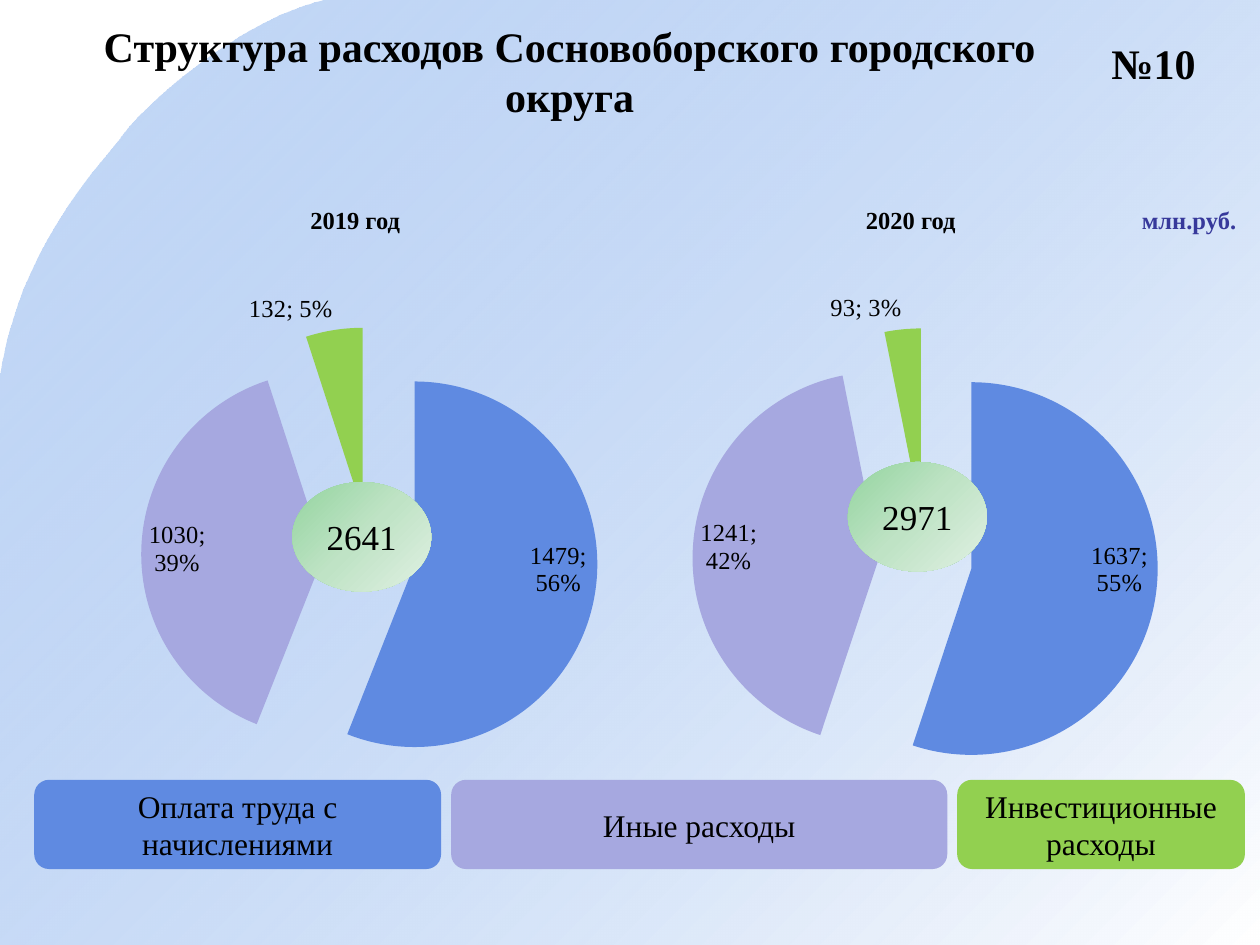
import pptx
import pptx.chart.data
import pptx.dml.color
import pptx.enum.chart
import pptx.enum.shapes
import pptx.enum.text
import pptx.oxml
import pptx.oxml.ns
import pptx.util

Pt = pptx.util.Pt
qn = pptx.oxml.ns.qn
Shape = pptx.enum.shapes.MSO_SHAPE
LabelPosition = pptx.enum.chart.XL_LABEL_POSITION

THEME = {
    "font": "Times New Roman",
    "chart_font": "Arial",
    "ink": "000000",
    "unit": "37399B",
    "pay": "5F8AE1",
    "other": "A6A8E0",
    "invest": "92D050",
    "wave": [(0, "699DE9", 39), (100, "FFFFFF", 100)],
    "total": [(0, "93D49F", 100), (50, "BFE3C5", 100), (100, "E0F0E3", 100)],
    "title_size": 24,
    "total_size": 20,
    "legend_size": 18,
    "label_size": 14,
    "chart_size": 10,
}

PAGE_WIDTH, PAGE_HEIGHT = 720, 540
WAVE_CURVES = [
    [(185.8, 0), (136.8, 11.5), (83.5, 59.8), (70.6, 77)],
    [(70.6, 77), (57.6, 95), (11.5, 139.7), (0, 216.7)],
]
CURVE_STEPS = 24

HEADINGS = [
    ("Структура расходов Сосновоборского городского округа", (36, 18, 579, 44.6), "title_size", "ink"),
    ("№10", (598.3, 0, 121.7, 71.3), "title_size", "ink"),
    ("2019 год", (150.5, 111.6, 105, 28), "label_size", "ink"),
    ("2020 год", (468, 111.6, 105, 28), "label_size", "ink"),
    ("млн.руб.", (627, 111.6, 105, 28), "label_size", "unit"),
]
SLICES = ["pay", "other", "invest"]
PIES = [
    {
        "box": (0, 157, 422.6, 300.2),
        "plot": (0.19, 0.1, 0.62, 0.87),
        "values": (1479, 1030, 132),
        "labels": [("1479;", "56%"), ("1030;", "39%")],
    },
    {
        "box": (337.7, 157, 382.3, 306),
        "plot": (0.15, 0.1, 0.7, 0.87),
        "values": (1637, 1241, 93),
        "labels": [("1637;", "55%"), ("1241;", "42%")],
    },
]
TOTALS = [("2641", 167, 275.5), ("2971", 484.5, 264)]
TOTAL_WIDTH, TOTAL_HEIGHT = 79.4, 62.6
LEGEND = [
    ("Оплата труда с начислениями", 232.5, "pay"),
    ("Иные расходы", 283.5, "other"),
    ("Инвестиционные расходы", 164.4, "invest"),
]
LEGEND_LEFT, LEGEND_TOP, LEGEND_HEIGHT, LEGEND_GAP = 19.6, 445.6, 51, 5.7


def points(values):
    return [Pt(value) for value in values]


def colour(name):
    return pptx.dml.color.RGBColor.from_string(THEME[name])


def style_font(font, size, face="font", ink="ink", bold=False):
    font.name = THEME[face]
    font.size = Pt(THEME[size])
    font.bold = bold
    font.color.rgb = colour(ink)


def write_text(box, text, size, ink="ink", bold=False):
    frame = box.text_frame
    frame.word_wrap = True
    frame.vertical_anchor = pptx.enum.text.MSO_ANCHOR.MIDDLE
    para = frame.paragraphs[0]
    para.alignment = pptx.enum.text.PP_ALIGN.CENTER
    span = para.add_run()
    span.text = text
    style_font(span.font, size, ink=ink, bold=bold)


def clean_shape(shape):
    shape.shadow.inherit = False
    shape.line.fill.background()


def fill_gradient(shape, stops):
    shape.fill.gradient()
    shape.fill.gradient_angle = 315
    stop_list = shape.element.spPr.find(".//" + qn("a:gsLst"))
    for stop in list(stop_list):
        stop_list.remove(stop)
    for position, rgb, opacity in stops:
        stop_list.append(pptx.oxml.parse_xml(
            f'<a:gs {pptx.oxml.ns.nsdecls("a")} pos="{position * 1000}"><a:srgbClr val="{rgb}">'
            f'<a:alpha val="{opacity * 1000}"/></a:srgbClr></a:gs>'))


def curve_point(controls, t):
    weights = ((1 - t) ** 3, 3 * t * (1 - t) ** 2, 3 * t * t * (1 - t), t ** 3)
    return tuple(sum(w * point[axis] for w, point in zip(weights, controls)) for axis in (0, 1))


def add_wave(page):
    outline = [curve_point(curve, step / CURVE_STEPS)
               for curve in WAVE_CURVES for step in range(1, CURVE_STEPS + 1)]
    outline += [(0, PAGE_HEIGHT), (PAGE_WIDTH, PAGE_HEIGHT), (PAGE_WIDTH, 0)]
    builder = page.shapes.build_freeform(*points(WAVE_CURVES[0][0]))
    builder.add_line_segments([points(corner) for corner in outline], close=True)
    wave = builder.convert_to_shape()
    clean_shape(wave)
    fill_gradient(wave, THEME["wave"])


def place_plot(chart, plot):
    area = chart.element.find(".//" + qn("c:plotArea"))
    for layout in area.findall(qn("c:layout")):
        area.remove(layout)
    sizes = "".join(f'<c:{key} val="{value}"/>' for key, value in zip("xywh", plot))
    area.insert(0, pptx.oxml.parse_xml(
        f'<c:layout {pptx.oxml.ns.nsdecls("c")}><c:manualLayout><c:layoutTarget val="inner"/>'
        f'<c:xMode val="edge"/><c:yMode val="edge"/>{sizes}</c:manualLayout></c:layout>'))


def label_slices(series, series_xml, texts):
    labels = series.data_labels
    labels.show_value = True
    labels.show_percentage = True
    labels.position = LabelPosition.OUTSIDE_END
    style_font(labels.font, "label_size")
    separator = pptx.oxml.parse_xml(f'<c:separator {pptx.oxml.ns.nsdecls("c")}>; </c:separator>')
    series_xml.find(qn("c:dLbls")).find(qn("c:showBubbleSize")).addnext(separator)
    for index, lines in enumerate(texts):
        label = series.points[index].data_label
        frame = label.text_frame
        for number, line in enumerate(lines):
            para = frame.add_paragraph() if number else frame.paragraphs[0]
            span = para.add_run()
            span.text = line
            style_font(span.font, "label_size")
        label.position = LabelPosition.INSIDE_END


def add_pie(page, pie):
    data = pptx.chart.data.CategoryChartData()
    data.categories = ["1", "2", "3"]
    data.add_series("Series 1", pie["values"])
    chart = page.shapes.add_chart(
        pptx.enum.chart.XL_CHART_TYPE.PIE, *points(pie["box"]), data).chart
    chart.has_legend = False
    chart.has_title = False
    style_font(chart.font, "chart_size", face="chart_font")
    place_plot(chart, pie["plot"])
    chart.plots[0].vary_by_categories = True
    series = chart.plots[0].series[0]
    series_xml = chart.element.find(".//" + qn("c:ser"))
    series_xml.find(qn("c:tx")).addnext(
        pptx.oxml.parse_xml(f'<c:explosion {pptx.oxml.ns.nsdecls("c")} val="25"/>'))
    for index, name in enumerate(SLICES):
        fill = series.points[index].format.fill
        fill.solid()
        fill.fore_color.rgb = colour(name)
    label_slices(series, series_xml, pie["labels"])


def main():
    deck = pptx.Presentation()
    deck.slide_width, deck.slide_height = Pt(PAGE_WIDTH), Pt(PAGE_HEIGHT)
    page = deck.slides.add_slide(deck.slide_layouts[6])
    add_wave(page)
    for text, place, size, ink in HEADINGS:
        write_text(page.shapes.add_textbox(*points(place)), text, size, ink, bold=True)
    for pie in PIES:
        add_pie(page, pie)
    for text, left, top in TOTALS:
        oval = page.shapes.add_shape(Shape.OVAL, *points((left, top, TOTAL_WIDTH, TOTAL_HEIGHT)))
        clean_shape(oval)
        fill_gradient(oval, THEME["total"])
        write_text(oval, text, "total_size")
    left = LEGEND_LEFT
    for text, width, name in LEGEND:
        place = points((left, LEGEND_TOP, width, LEGEND_HEIGHT))
        key = page.shapes.add_shape(Shape.ROUNDED_RECTANGLE, *place)
        clean_shape(key)
        key.fill.solid()
        key.fill.fore_color.rgb = colour(name)
        write_text(key, text, "legend_size")
        left += width + LEGEND_GAP
    deck.save("out.pptx")


if __name__ == "__main__":
    main()
